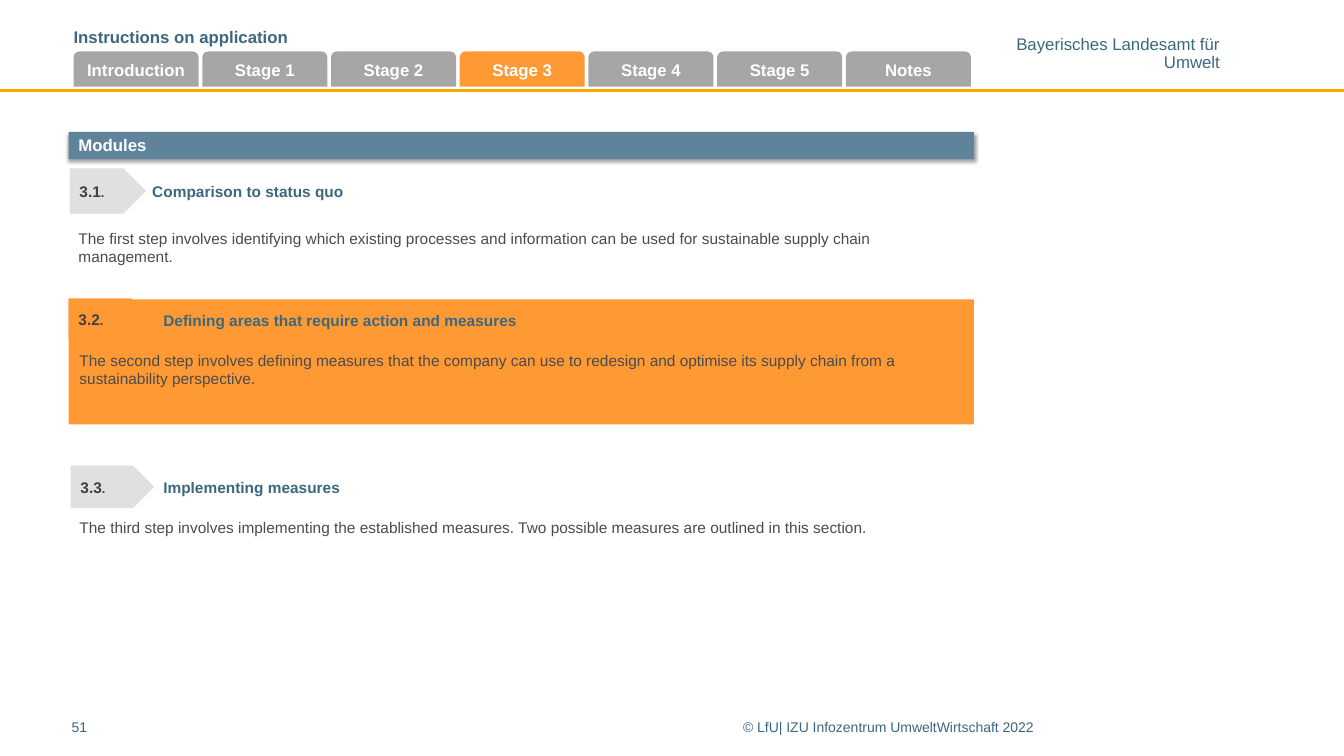
import pptx
import pptx.dml.color
import pptx.enum.shapes
import pptx.enum.text
import pptx.oxml
import pptx.oxml.ns
import pptx.util
from pptx.util import Inches

SHAPES = pptx.enum.shapes.MSO_SHAPE
ALIGN = pptx.enum.text.PP_ALIGN
ANCHOR = pptx.enum.text.MSO_ANCHOR
FIT = pptx.enum.text.MSO_AUTO_SIZE

TITLE = "Instructions on application"
AGENCY = "Bayerisches Landesamt für\nUmwelt"
TABS = ["Introduction", "Stage 1", "Stage 2", "Stage 3", "Stage 4", "Stage 5", "Notes"]
CURRENT_TAB = "Stage 3"
BANNER = "Modules"
PAGE_NUMBER = "51"
COPYRIGHT = "© LfU| IZU Infozentrum UmweltWirtschaft 2022"

# Each area is (left, top, width, height) in inches.
MODULES = [
    dict(number="3.1", heading="Comparison to status quo",
         body="The first step involves identifying which existing processes and information "
              "can be used for sustainable supply chain management.",
         marker_area=(0.69, 1.67, 0.76, 0.45), heading_area=(1.32, 1.68, 8.31, 0.44),
         body_area=(0.68, 2.22, 8.95, 0.88), indent=0.08, marker="marker"),
    dict(number="3.2", heading="Defining areas that require action and measures",
         body="The second step involves defining measures that the company can use to redesign "
              "and optimise its supply chain from a sustainability perspective.",
         marker_area=(0.68, 2.96, 0.83, 0.42), heading_area=(1.41, 2.96, 8.22, 0.44),
         body_area=(0.69, 3.43, 8.97, 0.47), indent=0.1, marker="accent"),
    dict(number="3.3", heading="Implementing measures",
         body="The third step involves implementing the established measures. "
              "Two possible measures are outlined in this section.",
         marker_area=(0.7, 4.62, 0.83, 0.42), heading_area=(1.41, 4.62, 8.22, 0.44),
         body_area=(0.69, 5.09, 8.93, 0.47), indent=0.1, marker="marker"),
]
HIGHLIGHT_AREA = (0.68, 2.97, 8.98, 1.24)
BANNER_AREA = (0.68, 1.31, 8.98, 0.27)
TAB_FIRST, TAB_LAST, TAB_TOP, TAB_WIDTH, TAB_HEIGHT = 0.73, 8.39, 0.51, 1.24, 0.35

THEME = {
    "font": "Arial",
    "colors": {"accent": "FF9933", "rule": "F9AA00", "heading": "3B687F", "body": "4B4B4B",
               "number": "404040", "banner": "5E839A", "tab": "A6A6A6", "marker": "E0E0E0",
               "white": "FFFFFF"},
    "sizes": {"label": 12, "text": 11, "footer": 10, "dot": 9},
}


def color(name):
    return pptx.dml.color.RGBColor.from_string(THEME["colors"][name])


def style(span, size, tint, bold=False):
    span.font.name = THEME["font"]
    span.font.size = pptx.util.Pt(THEME["sizes"][size])
    span.font.color.rgb = color(tint)
    span.font.bold = bold


def write(box, text, size, tint, bold=False, align=ALIGN.LEFT, anchor=ANCHOR.TOP,
          insets=(0.1, 0.05), spacing=None):
    """Fill a box with uniformly styled text; insets are (sides, top and bottom)."""
    frame = box.text_frame
    frame.word_wrap = True
    frame.vertical_anchor = anchor
    frame.margin_left = frame.margin_right = Inches(insets[0])
    frame.margin_top = frame.margin_bottom = Inches(insets[1])
    frame.text = text
    for para in frame.paragraphs:
        para.alignment = align
        para.line_spacing = spacing
        for span in para.runs:
            style(span, size, tint, bold)
    return frame


def add_text(page, area, *args, **options):
    box = page.shapes.add_textbox(*map(Inches, area))
    return write(box, *args, **options)


def add_block(page, kind, area, fill):
    block = page.shapes.add_shape(kind, *map(Inches, area))
    block.shadow.inherit = False
    block.fill.solid()
    block.fill.fore_color.rgb = color(fill)
    block.line.fill.background()
    return block


def add_header(page, slide_width):
    rule = page.shapes.add_connector(pptx.enum.shapes.MSO_CONNECTOR.STRAIGHT,
                                     0, Inches(0.9), slide_width, Inches(0.9))
    rule.line.color.rgb = color("rule")
    rule.line.width = pptx.util.Pt(2)
    rule._element.spPr.append(pptx.oxml.parse_xml(
        f'<a:effectLst {pptx.oxml.ns.nsdecls("a")}/>'))
    agency = add_text(page, (10.07, 0.37, 2.03, 0.34), AGENCY, "label", "heading",
                      align=ALIGN.RIGHT, insets=(0, 0), spacing=0.85)
    agency.word_wrap = False
    agency.auto_size = FIT.SHAPE_TO_FIT_TEXT

    pitch = (TAB_LAST - TAB_FIRST) / (len(TABS) - 1)
    for index, label in enumerate(TABS):
        area = (TAB_FIRST + index * pitch, TAB_TOP, TAB_WIDTH, TAB_HEIGHT)
        fill = "accent" if label == CURRENT_TAB else "tab"
        tab = add_block(page, SHAPES.ROUND_2_SAME_RECTANGLE, area, fill)
        write(tab, label, "label", "white", True, ALIGN.CENTER, ANCHOR.MIDDLE, (0.04, 0.05))
    add_text(page, (0.73, 0.19, 7.93, 0.52), TITLE, "label", "heading", True,
             insets=(0, 0.05), spacing=pptx.util.Pt(16))


def add_banner(page):
    banner = add_block(page, SHAPES.RECTANGLE, BANNER_AREA, "banner")
    write(banner, BANNER, "label", "white", True, spacing=pptx.util.Pt(12.8))
    effects = banner._element.spPr.find(pptx.oxml.ns.qn("a:effectLst"))
    effects.append(pptx.oxml.parse_xml(
        f'<a:outerShdw {pptx.oxml.ns.nsdecls("a")} blurRad="{pptx.util.Pt(3.1)}" '
        f'dist="{pptx.util.Pt(1.6)}" dir="5400000" rotWithShape="0">'
        '<a:srgbClr val="000000"><a:alpha val="38000"/></a:srgbClr></a:outerShdw>'))


def add_module(page, module):
    body = add_text(page, module["body_area"], module["body"], "text", "body")
    body.auto_size = FIT.NONE
    heading = add_text(page, module["heading_area"], module["heading"], "text", "heading", True,
                       anchor=ANCHOR.MIDDLE, insets=(0.11, 0.06))
    heading.paragraphs[0]._p.get_or_add_pPr().set("marL", str(Inches(module["indent"])))
    marker = add_block(page, SHAPES.PENTAGON, module["marker_area"], module["marker"])
    number = write(marker, module["number"], "text", "number", True, anchor=ANCHOR.MIDDLE)
    dot = number.paragraphs[0].add_run()
    dot.text = "."
    style(dot, "dot", "number", True)


def main():
    deck = pptx.Presentation()
    deck.slide_width, deck.slide_height = Inches(13.33), Inches(7.5)
    page = deck.slides.add_slide(deck.slide_layouts[6])
    add_header(page, deck.slide_width)
    add_block(page, SHAPES.RECTANGLE, HIGHLIGHT_AREA, "accent")
    add_banner(page)
    for module in MODULES:
        add_module(page, module)
    for left, width, text in [(0.71, 0.7, PAGE_NUMBER), (7.37, 5.36, COPYRIGHT)]:
        add_text(page, (left, 7.08, width, 0.31), text, "footer", "heading", insets=(0, 0.05))
    deck.save("out.pptx")


if __name__ == "__main__":
    main()
